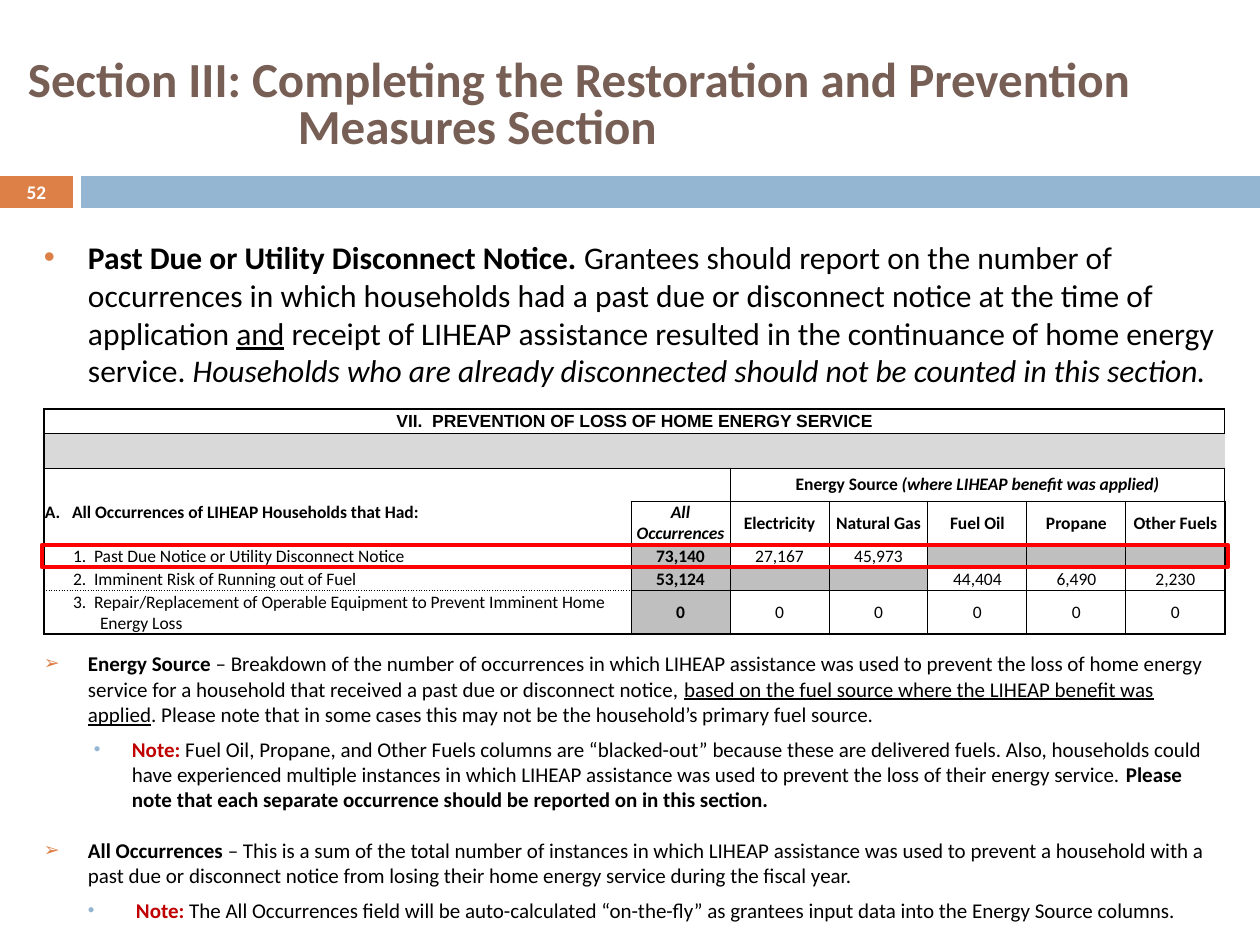
from dataclasses import dataclass

from lxml.etree import SubElement
from pptx import Presentation
from pptx.dml.color import RGBColor
from pptx.enum.shapes import MSO_SHAPE
from pptx.enum.text import MSO_ANCHOR, PP_ALIGN
from pptx.oxml.ns import qn
from pptx.util import Pt

PX = 914400 / 126


@dataclass(frozen=True)
class Theme:
    """Colours, fonts and type sizes of the slide."""
    black: str = "000000"
    white: str = "FFFFFF"
    brown: str = "775F55"
    orange: str = "DD8047"
    blue: str = "94B6D2"
    note: str = "C00000"
    outline: str = "FF0000"
    band: str = "D9D9D9"
    shade: str = "BFBFBF"
    font: str = "Calibri"
    table_title_font: str = "Arial"
    title: int = 28
    lead: int = 18
    detail: int = 12
    number: int = 11
    table: int = 10


@dataclass(frozen=True)
class Box:
    """A rectangle in px."""
    left: int
    top: int
    width: int
    height: int

    def emu(self):
        """Return the rectangle in EMU."""
        return [emu(side) for side in (self.left, self.top, self.width, self.height)]


THEME = Theme()
COLUMNS = [587] + [99] * 6
ROWS = [24, 35, 33, 44, 23, 23, 42]
HEADINGS = ["Electricity", "Natural Gas", "Fuel Oil", "Propane", "Other Fuels"]
OCCURRENCES = [
    ["1.  Past Due Notice or Utility Disconnect Notice", "73,140", "27,167", "45,973", "", "", ""],
    ["2.  Imminent Risk of Running out of Fuel", "53,124", "", "", "44,404", "6,490", "2,230"],
    ["3.  Repair/Replacement of Operable Equipment to Prevent Imminent Home Energy Loss"] + ["0"] * 6,
]
LEAD = [
    ("Past Due or Utility Disconnect Notice. ", "b"),
    ("Grantees should report on the number of occurrences in which households had a past due "
     "or disconnect notice at the time of application ", ""),
    ("and", "u"),
    (" receipt of LIHEAP assistance resulted in the continuance of home energy service. ", ""),
    ("Households who are already disconnected should not be counted in this section.", "i"),
]
ARROW = ("➢", THEME.orange, 90)
DOT = ("•", THEME.blue, 90)
DETAILS = [
    (ARROW, 44, 44, 0, [
        ("Energy Source ", "b"),
        ("– Breakdown of the number of occurrences in which LIHEAP assistance was used to prevent "
         "the loss of home energy service for a household that received a past due or disconnect notice, ", ""),
        ("based on the fuel source where the LIHEAP benefit was applied", "u"),
        (". Please note that in some cases this may not be the household’s primary fuel source.", "")]),
    (DOT, 88, 38, 5.5, [
        ("Note: ", "bn"),
        ("Fuel Oil, Propane, and Other Fuels columns are “blacked-out” because these are delivered fuels. "
         "Also, households could have experienced multiple instances in which LIHEAP assistance was used "
         "to prevent the loss of their energy service. ", ""),
        ("Please note that each separate occurrence should be reported on in this section.", "b")]),
    (ARROW, 44, 44, 14.5, [
        ("All Occurrences ", "b"),
        ("– This is a sum of the total number of instances in which LIHEAP assistance was used to prevent "
         "a household with a past due or disconnect notice from losing their home energy service "
         "during the fiscal year.", "")]),
    (DOT, 92, 48, 5.5, [
        ("Note: ", "bn"),
        ("The All Occurrences field will be auto-calculated “on-the-fly” as grantees input data "
         "into the Energy Source columns.", "")]),
]


def emu(length):
    """Turn px into EMU."""
    return round(length * PX)


def set_font(para, size, color=THEME.black, bold=False, name=THEME.font):
    """Set the font shared by all runs of a paragraph."""
    para.font.name, para.font.size, para.font.bold = name, Pt(size), bold
    para.font.color.rgb = RGBColor.from_string(color)


def add_spans(para, spans):
    """Add runs whose flags are b bold, i italic, u underline, n note colour."""
    for text, flags in spans:
        span = para.add_run()
        span.text = text
        if "b" in flags:
            span.font.bold = True
        if "i" in flags:
            span.font.italic = True
        if "u" in flags:
            span.font.underline = True
        if "n" in flags:
            span.font.color.rgb = RGBColor.from_string(THEME.note)


def set_indent(para, margin, hang):
    """Give a paragraph a hanging indent."""
    properties = para._p.get_or_add_pPr()
    properties.set("marL", str(emu(margin)))
    properties.set("indent", str(-emu(hang)))
    return properties


def set_bullet(para, margin, hang, bullet):
    """Give a paragraph a coloured bullet."""
    symbol, color, percent = bullet
    properties = set_indent(para, margin, hang)
    parts = [SubElement(properties, qn(tag)) for tag in ("a:buClr", "a:buSzPct", "a:buFont", "a:buChar")]
    SubElement(parts[0], qn("a:srgbClr")).set("val", color)
    parts[1].set("val", str(percent * 1000))
    parts[2].set("typeface", THEME.table_title_font)
    parts[3].set("char", symbol)


def add_text(page, box):
    """Add a wrapping text box without insets."""
    frame = page.shapes.add_textbox(*box.emu()).text_frame
    frame.word_wrap = True
    frame.margin_left = frame.margin_right = frame.margin_top = frame.margin_bottom = 0
    return frame


def add_rectangle(page, box, fill=None, line=None):
    """Add a flat rectangle."""
    shape = page.shapes.add_shape(MSO_SHAPE.RECTANGLE, *box.emu())
    shape.shadow.inherit = False
    if fill:
        shape.fill.solid()
        shape.fill.fore_color.rgb = RGBColor.from_string(fill)
    else:
        shape.fill.background()
    if line:
        shape.line.color.rgb = RGBColor.from_string(line)
        shape.line.width = Pt(2.5)
    else:
        shape.line.fill.background()
    return shape


def add_header(page, box):
    """Place the title above the numbered band."""
    band_height, number_width, gap = 32, 73, 8
    frame = add_text(page, Box(box.left + 13, box.top, box.width - 26, 136))
    frame.vertical_anchor = MSO_ANCHOR.MIDDLE
    para = frame.paragraphs[0]
    set_indent(para, 285, 270)
    para.line_spacing = 0.8
    set_font(para, THEME.title, THEME.brown, True)
    add_spans(para, [("Section III: Completing the Restoration and Prevention Measures Section", "")])
    band_top, band_left = box.top + box.height - band_height, box.left + number_width + gap
    number = add_rectangle(page, Box(box.left, band_top, number_width, band_height), THEME.orange)
    add_rectangle(page, Box(band_left, band_top, box.width - band_left, band_height), THEME.blue)
    para = number.text_frame.paragraphs[0]
    para.alignment = PP_ALIGN.CENTER
    set_font(para, THEME.number, THEME.white, True)
    add_spans(para, [("52", "")])


def add_lead(page, box):
    """Place the large bulleted paragraph."""
    para = add_text(page, box).paragraphs[0]
    set_bullet(para, 44, 44, ("•", THEME.orange, 100))
    set_font(para, THEME.lead)
    add_spans(para, LEAD)


def add_details(page, box):
    """Place the small bulleted paragraphs."""
    frame = add_text(page, box)
    for index, (bullet, margin, hang, space, spans) in enumerate(DETAILS):
        para = frame.add_paragraph() if index else frame.paragraphs[0]
        para.space_before = Pt(space)
        set_bullet(para, margin, hang, bullet)
        set_font(para, THEME.detail)
        add_spans(para, spans)


def cell_borders(row, column):
    """Return the width and dash of each ruled side of a cell."""
    thin, thick, dotted = (0.5, "solid"), (1, "solid"), (0.5, "sysDot")
    sides = {}
    if row == 0 or row > 2 or (row == 2 and column > 1):
        sides = dict.fromkeys(("a:lnL", "a:lnR", "a:lnT", "a:lnB"), thin)
    elif row == 1:
        sides = {"a:lnT": thin} | ({"a:lnB": thin} if column > 1 else {})
    elif column == 1:
        sides = {"a:lnR": thin, "a:lnB": thin}
    if column == 0 and row == 3:
        del sides["a:lnT"]
    if column == 0 and row > 4:
        sides["a:lnT"] = dotted
    if column == 0 and row in (4, 5):
        sides["a:lnB"] = dotted
    edges = {"a:lnL": column == 0, "a:lnR": column == 6, "a:lnT": row == 0, "a:lnB": row == 6}
    sides |= {side: thick for side, outer in edges.items() if outer}
    return {side: sides[side] for side in edges if side in sides}


def style_cell(cell, row, column):
    """Set the insets, borders, fill and font of a cell."""
    cell.margin_left = cell.margin_right = cell.margin_top = emu(1)
    cell.margin_bottom = 0
    cell.vertical_anchor = MSO_ANCHOR.TOP if (row, column) == (3, 0) else MSO_ANCHOR.MIDDLE
    for side, (width, dash) in cell_borders(row, column).items():
        line = SubElement(cell._tc.get_or_add_tcPr(), qn(side), w=str(Pt(width)))
        SubElement(SubElement(line, qn("a:solidFill")), qn("a:srgbClr")).set("val", THEME.black)
        SubElement(line, qn("a:prstDash")).set("val", dash)
    shaded = row > 3 and (column == 1 or not OCCURRENCES[row - 4][column])
    if row == 1 or shaded:
        cell.fill.solid()
        cell.fill.fore_color.rgb = RGBColor.from_string(THEME.band if row == 1 else THEME.shade)
    else:
        cell.fill.background()
    para = cell.text_frame.paragraphs[0]
    para.alignment = PP_ALIGN.CENTER if column or row == 0 else PP_ALIGN.LEFT
    if column == 0 and row > 3:
        set_indent(para, 55, 27)
    set_font(para, THEME.table, bold=row < 4 or column == 1,
             name=THEME.font if row else THEME.table_title_font)


def add_occurrence_table(page, box):
    """Place the table and outline its first data row."""
    table = page.shapes.add_table(len(ROWS), len(COLUMNS), *box.emu()).table
    table.first_row = table.horz_banding = False
    table._tbl.tblPr.find(qn("a:tableStyleId")).text = "{2D5ABB26-0587-4C30-8999-92F81FD0307C}"
    for column, width in zip(table.columns, COLUMNS):
        column.width = emu(width)
    contents = {(0, 0): [("VII.  PREVENTION OF LOSS OF HOME ENERGY SERVICE", "")],
                (2, 2): [("Energy Source ", ""), ("(where LIHEAP benefit was applied)", "i")],
                (3, 0): [("A.   All Occurrences of LIHEAP Households that Had:", "")],
                (3, 1): [("All Occurrences", "i")]}
    contents |= {(3, column): [(text, "")] for column, text in enumerate(HEADINGS, 2)}
    contents |= {(row, column): [(text, "")] for row, texts in enumerate(OCCURRENCES, 4)
                 for column, text in enumerate(texts) if text}
    for row, height in enumerate(ROWS):
        table.rows[row].height = emu(height)
        for column in range(len(COLUMNS)):
            cell = table.cell(row, column)
            style_cell(cell, row, column)
            add_spans(cell.text_frame.paragraphs[0], contents.get((row, column), []))
    for row, first in ((0, 0), (1, 2), (2, 2)):
        table.cell(row, first).merge(table.cell(row, 6))
    add_rectangle(page, Box(box.left - 2, box.top + sum(ROWS[:4]), box.width + 5, 22), line=THEME.outline)


def main():
    """Build and save the slide."""
    deck = Presentation()
    deck.slide_width, deck.slide_height = emu(1260), emu(945)
    page = deck.slides.add_slide(deck.slide_layouts[6])
    add_header(page, Box(0, 39, 1260, 169))
    add_lead(page, Box(44, 238, 1182, 156))
    add_details(page, Box(44, 651, 1182, 276))
    add_occurrence_table(page, Box(44, 409, sum(COLUMNS), sum(ROWS)))
    deck.save("out.pptx")


if __name__ == "__main__":
    main()
